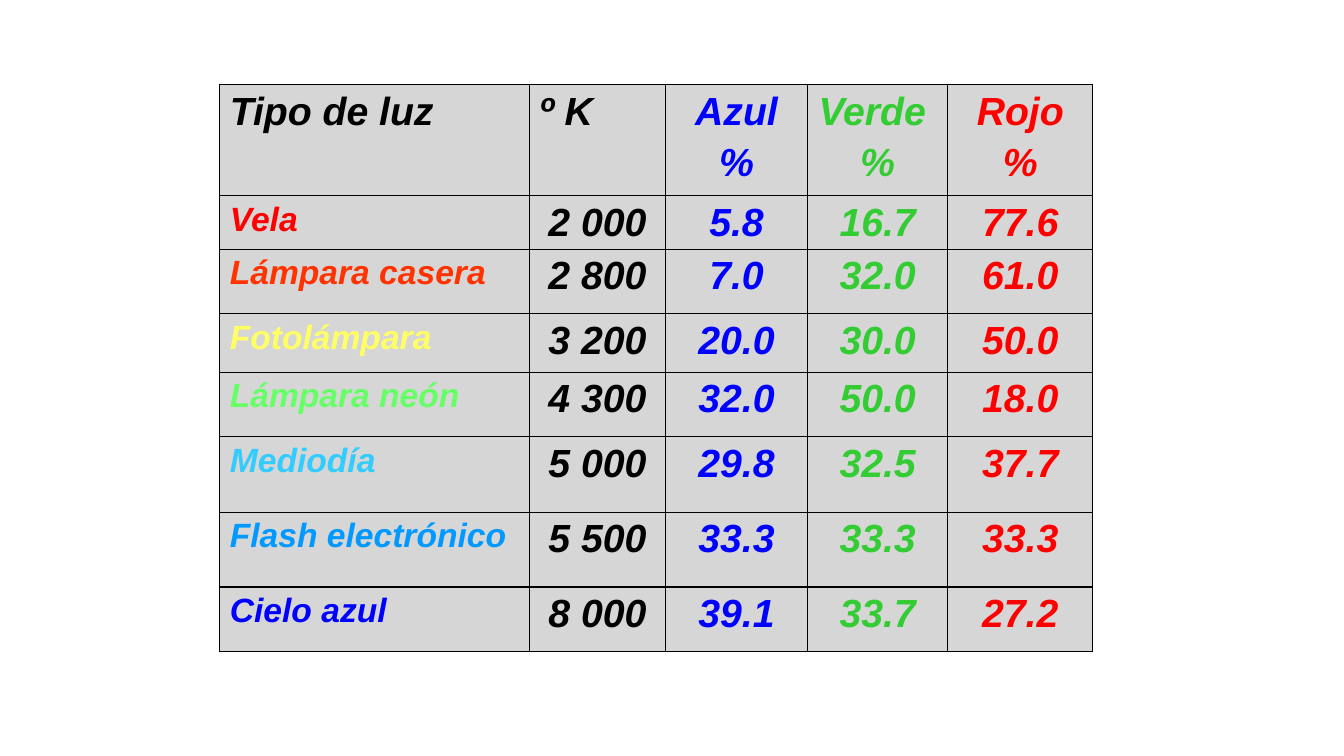
from lxml import etree
from pptx import Presentation
from pptx.dml.color import RGBColor
from pptx.enum.text import PP_ALIGN
from pptx.oxml.ns import qn
from pptx.util import Inches, Pt

LEFT, CENTER = PP_ALIGN.LEFT, PP_ALIGN.CENTER
FONT = "Arial"
BLACK, GREY = "000000", "D6D6D6"

HEADERS = ["Tipo de luz", "º K", "Azul\n%", "Verde \n%", "Rojo\n%"]
COLUMN_COLORS = [BLACK, BLACK, "0000FF", "33CC33", "FF0000"]
LIGHTS = [
    ("Vela", "FF0000", ["2 000", "5.8", "16.7", "77.6"]),
    ("Lámpara casera", "FF3300", ["2 800", "7.0", "32.0", "61.0"]),
    ("Fotolámpara", "FFFF66", ["3 200", "20.0", "30.0", "50.0"]),
    ("Lámpara neón", "66FF66", ["4 300", "32.0", "50.0", "18.0"]),
    ("Mediodía", "33CCFF", ["5 000", "29.8", "32.5", "37.7"]),
    ("Flash electrónico", "0099FF", ["5 500", "33.3", "33.3", "33.3"]),
    ("Cielo azul", "0000FF", ["8 000", "39.1", "33.7", "27.2"]),
]
TABLE_LEFT, TABLE_TOP = 2.18, 0.84
COL_WIDTHS = [3.07, 1.35, 1.41, 1.39, 1.44]
ROW_HEIGHTS = [1.1, 0.53, 0.64, 0.58, 0.64, 0.75, 0.74, 0.64]


def rgb(color):
    return RGBColor.from_string(color)


def add_borders(cell):
    tcPr = cell._tc.get_or_add_tcPr()
    for i, side in enumerate(("a:lnL", "a:lnR", "a:lnT", "a:lnB")):
        ln = etree.Element(qn(side), w=str(Pt(1)))
        fill = etree.SubElement(ln, qn("a:solidFill"))
        etree.SubElement(fill, qn("a:srgbClr"), val=BLACK)
        tcPr.insert(i, ln)


def fill_cell(cell, text, size, color, align):
    cell.fill.solid()
    cell.fill.fore_color.rgb = rgb(GREY)
    add_borders(cell)
    tf = cell.text_frame
    for i, line in enumerate(text.split("\n")):
        p = tf.add_paragraph() if i else tf.paragraphs[0]
        p.alignment = align
        before = etree.SubElement(p._p.get_or_add_pPr(), qn("a:spcBef"))
        etree.SubElement(before, qn("a:spcPct"), val="20000")
        r = p.add_run()
        r.text = line
        r.font.name = FONT
        r.font.size = Pt(size)
        r.font.bold = r.font.italic = True
        r.font.color.rgb = rgb(color)


prs = Presentation()
prs.slide_width, prs.slide_height = Inches(13.33), Inches(7.5)
s = prs.slides.add_slide(prs.slide_layouts[6])
table = s.shapes.add_table(
    len(ROW_HEIGHTS), len(COL_WIDTHS), Inches(TABLE_LEFT), Inches(TABLE_TOP),
    Inches(sum(COL_WIDTHS)), Inches(sum(ROW_HEIGHTS))).table
for column, width in zip(table.columns, COL_WIDTHS):
    column.width = Inches(width)
for row, height in zip(table.rows, ROW_HEIGHTS):
    row.height = Inches(height)

for c, (header, color) in enumerate(zip(HEADERS, COLUMN_COLORS)):
    fill_cell(table.cell(0, c), header, 28, color, CENTER if c > 1 else LEFT)
for r, (light, light_color, values) in enumerate(LIGHTS, 1):
    fill_cell(table.cell(r, 0), light, 24, light_color, LEFT)
    for c, value in enumerate(values, 1):
        fill_cell(table.cell(r, c), value, 28, COLUMN_COLORS[c], CENTER)

prs.save("out.pptx")
